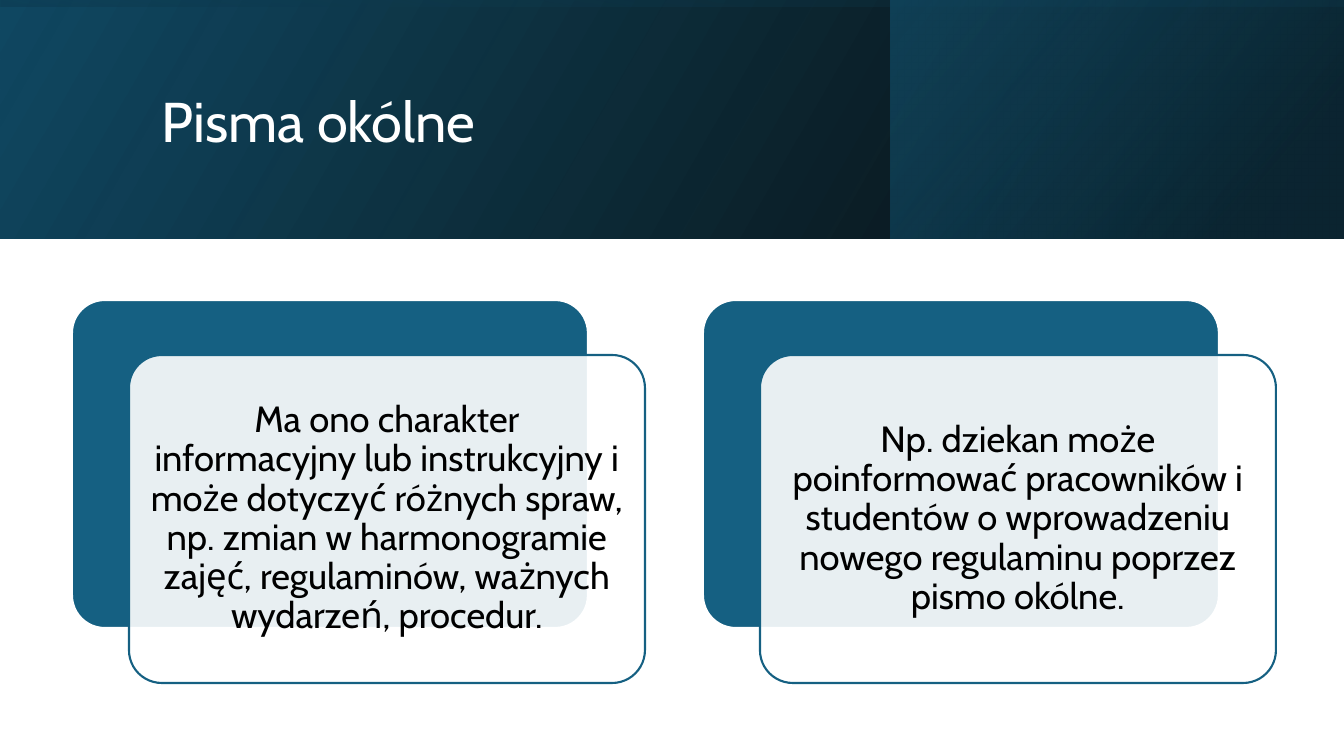
from lxml import etree
from pptx import Presentation
from pptx import util as u
from pptx.dml.color import RGBColor
from pptx.enum import shapes, text
from pptx.oxml.ns import qn

TITLE = "Pisma okólne"
CARDS = [
    "Ma ono charakter informacyjny lub instrukcyjny i może dotyczyć różnych spraw, "
    "np. zmian w harmonogramie zajęć, regulaminów, ważnych wydarzeń, procedur.",
    "Np. dziekan może poinformować pracowników i studentów o wprowadzeniu "
    "nowego regulaminu poprzez pismo okólne.",
]
COLORS = {"white": "FFFFFF", "black": "000000", "teal": "156082",
          "navy": "104862", "deep": "0B3041"}
FONT = "Cabin"
PX = 914400 / 100.8
PAGE_W, PAGE_H, BAND_H = 1344, 756, 239
SIDE_X, SIDE_W = 891, 452
CARD_X, CARD_Y, CARD_W, CARD_H = 72, 300, 516, 328
CARD_STEP, SHIFT_X, SHIFT_Y = 631, 57, 55
CARD_INSET = 11

BANDS = [
    ((0, 0, PAGE_W, BAND_H), 0, 330,
     [(0, "black", 96), (100, "navy", 100)]),
    ((SIDE_X, 0, SIDE_W, BAND_H), 0, 320,
     [(19, "deep", 68), (100, "teal", 48)]),
    (((PAGE_W - BAND_H) / 2, (BAND_H - PAGE_W) / 2, BAND_H, PAGE_W), 270, 350,
     [(23, "navy", 16), (99, "black", 45)]),
]


def px(value):
    return u.Emu(round(value * PX))


def rgb(name):
    return RGBColor.from_string(COLORS[name])


def set_opacity(color_element, percent):
    alpha = etree.SubElement(color_element, qn("a:alpha"))
    alpha.set("val", str(percent * 1000))


def add_shape(page, kind, area):
    shape = page.shapes.add_shape(kind, *map(px, area))
    shape.shadow.inherit = False
    return shape


def add_band(page, area, rotation, angle, stops):
    band = add_shape(page, shapes.MSO_SHAPE.RECTANGLE, area)
    band.rotation = rotation
    band.line.fill.background()
    band.fill.gradient()
    band.fill.gradient_angle = 360 - angle
    for stop, (position, color, _) in zip(band.fill.gradient_stops, stops):
        stop.position = position / 100
        stop.color.rgb = rgb(color)
    properties = band._element.spPr
    for element, (_, _, opacity) in zip(properties.iter(qn("a:srgbClr")), stops):
        set_opacity(element, opacity)
    properties.find(qn("a:xfrm")).set("flipH", "1")


def add_card(page, left, top, fill, line, opacity):
    card = add_shape(page, shapes.MSO_SHAPE.ROUNDED_RECTANGLE,
                     (left, top, CARD_W, CARD_H))
    card.adjustments[0] = 0.1
    card.fill.solid()
    card.fill.fore_color.rgb = rgb(fill)
    set_opacity(next(card._element.spPr.iter(qn("a:srgbClr"))), opacity)
    card.line.color.rgb = rgb(line)
    card.line.width = u.Pt(1.5)
    return card


def write(box, words, size, color, align):
    frame = box.text_frame
    frame.word_wrap = True
    frame.vertical_anchor = text.MSO_ANCHOR.MIDDLE
    para = frame.paragraphs[0]
    para.alignment = align
    para.line_spacing = 0.9
    span = para.add_run()
    span.text = words
    span.font.name = FONT
    span.font.size = u.Pt(size)
    span.font.color.rgb = rgb(color)
    return frame


def main():
    deck = Presentation()
    deck.slide_width, deck.slide_height = px(PAGE_W), px(PAGE_H)
    page = deck.slides.add_slide(deck.slide_layouts[6])
    for band in BANDS:
        add_band(page, *band)
    title = page.shapes.add_textbox(*map(px, (152, 38, 1072, 173)))
    write(title, TITLE, 40, "white", text.PP_ALIGN.LEFT)
    for index, words in enumerate(CARDS):
        left = CARD_X + index * CARD_STEP
        add_card(page, left, CARD_Y, "teal", "white", 100)
        front = add_card(page, left + SHIFT_X, CARD_Y + SHIFT_Y,
                         "white", "teal", 90)
        frame = write(front, words, 26, "black", text.PP_ALIGN.CENTER)
        frame.margin_left = frame.margin_right = px(CARD_INSET)
        frame.margin_top = frame.margin_bottom = px(CARD_INSET)
    deck.save("out.pptx")


if __name__ == "__main__":
    main()
